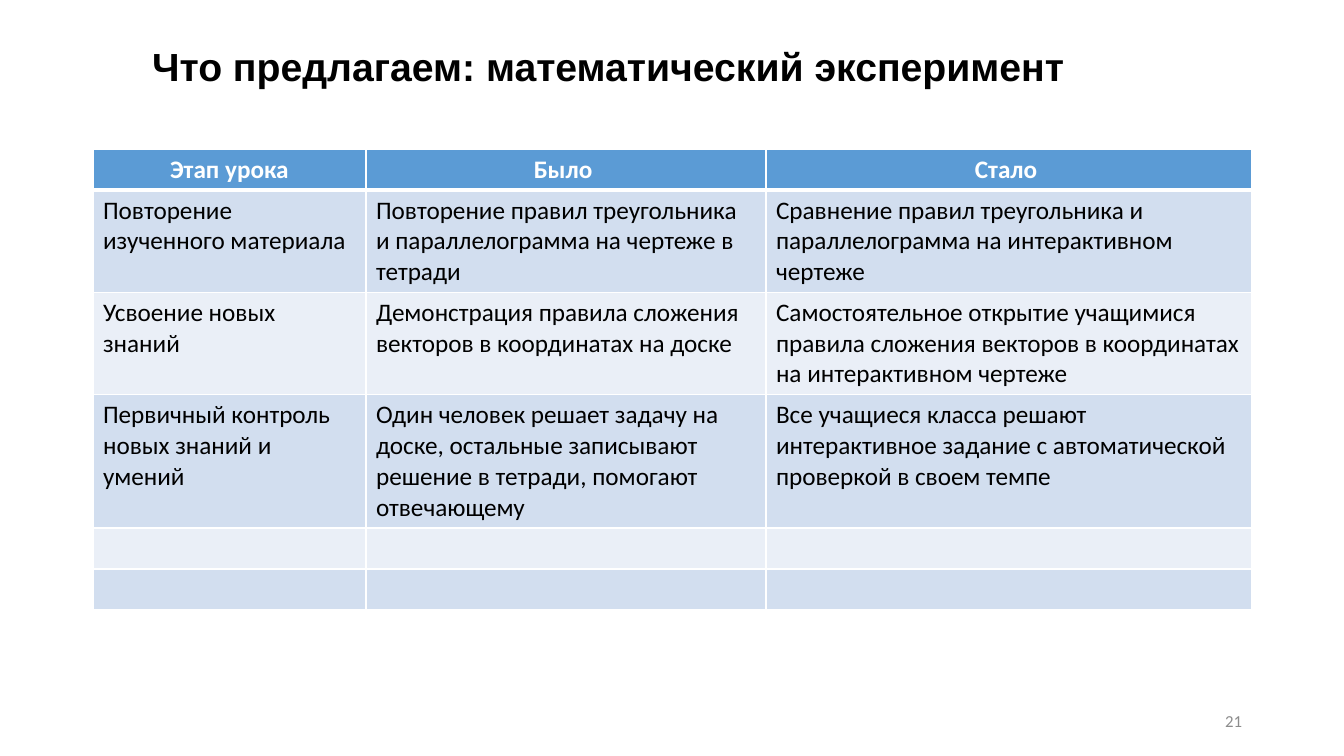
"""Build a lesson-comparison slide with a title, a table and a slide number."""
from lxml.etree import SubElement
from pptx import Presentation
from pptx.dml.color import RGBColor
from pptx.enum.text import MSO_ANCHOR as ANCHOR, MSO_AUTO_SIZE as AUTO, PP_ALIGN as ALIGN
from pptx.oxml.ns import qn
from pptx.util import Pt

PX = 914400 / 100.8
COLORS = {"text": "000000", "header": "5B9BD5", "odd": "D2DEEF",
          "even": "EAEFF7", "white": "FFFFFF", "number": "8C8C8C"}
COLUMNS = [273, 400, 486]
HEIGHTS = [41, 102, 102, 133, 41, 41]
ROWS = [
    ["Этап урока", "Было ", "Стало "],
    ["Повторение изученного материала",
     "Повторение правил треугольника и параллелограмма на чертеже в тетради",
     "Сравнение правил треугольника и параллелограмма на интерактивном чертеже"],
    ["Усвоение новых знаний",
     "Демонстрация правила сложения векторов в координатах на доске",
     "Самостоятельное открытие учащимися правила сложения векторов "
     "в координатах на интерактивном чертеже"],
    ["Первичный контроль новых знаний и умений",
     "Один человек решает задачу на доске, остальные записывают решение "
     "в тетради, помогают отвечающему",
     "Все учащиеся класса решают интерактивное задание "
     "с автоматической проверкой в своем темпе"],
    [""] * 3,
    [""] * 3,
]


def px(n):
    """Turn a length in px into EMU."""
    return round(n * PX)


def rgb(name):
    """Look up a named colour."""
    return RGBColor.from_string(COLORS[name])


def add_run(p, text, size, color, bold=False, font="Calibri", align=ALIGN.LEFT):
    """Align a paragraph and add one formatted run to it."""
    p.alignment = align
    r = p.add_run()
    r.text = text
    r.font.size, r.font.bold, r.font.name = Pt(size), bold, font
    r.font.color.rgb = rgb(color)


def add_borders(cell, top, bottom):
    """Draw white borders round a cell, with widths in points."""
    tcPr = cell._tc.get_or_add_tcPr()
    for side, width in (("L", 1), ("R", 1), ("T", top), ("B", bottom)):
        ln = SubElement(tcPr, qn(f"a:ln{side}"), w=str(Pt(width)))
        fill = SubElement(ln, qn("a:solidFill"))
        SubElement(fill, qn("a:srgbClr"), val=COLORS["white"])


def add_title(s, x, y, w, h):
    """Place and format the slide title."""
    sp = s.shapes.title
    sp.left, sp.top, sp.width, sp.height = map(px, (x, y, w, h))
    tf = sp.text_frame
    tf.auto_size, tf.vertical_anchor = AUTO.NONE, ANCHOR.MIDDLE
    p = tf.paragraphs[0]
    p.line_spacing = 0.9
    add_run(p, "Что предлагаем: математический эксперимент", 28, "text", True, "Arial")


def add_comparison(s, x, y, w, h):
    """Add the banded comparison table."""
    table = s.shapes.add_table(len(ROWS), len(COLUMNS), *map(px, (x, y, w, h))).table
    table.first_row = table.horz_banding = False
    for column, width in zip(table.columns, COLUMNS):
        column.width = px(width)
    for i, (row, height, texts) in enumerate(zip(table.rows, HEIGHTS, ROWS)):
        row.height = px(height)
        head = i == 0
        band = "header" if head else "odd" if i % 2 else "even"
        for cell, text in zip(row.cells, texts):
            add_borders(cell, 3 if i == 1 else 1, 3 if head else 1)
            cell.fill.solid()
            cell.fill.fore_color.rgb = rgb(band)
            if text:
                add_run(cell.text_frame.paragraphs[0], text, 18,
                        "white" if head else "text", head,
                        align=ALIGN.CENTER if head else ALIGN.LEFT)


def add_number(s, x, y, w, h):
    """Add the slide number."""
    tf = s.shapes.add_textbox(*map(px, (x, y, w, h))).text_frame
    tf.word_wrap, tf.vertical_anchor = True, ANCHOR.MIDDLE
    add_run(tf.paragraphs[0], "21", 12, "number", align=ALIGN.RIGHT)


def main():
    """Build and save the presentation."""
    prs = Presentation()
    prs.slide_width, prs.slide_height = px(1344), px(756)
    s = prs.slides.add_slide(prs.slide_layouts[5])
    add_title(s, 142, 17, 1110, 104)
    add_comparison(s, 93, 149, sum(COLUMNS), sum(HEIGHTS))
    add_number(s, 950, 701, 302, 40)
    prs.save("out.pptx")


if __name__ == "__main__":
    main()
